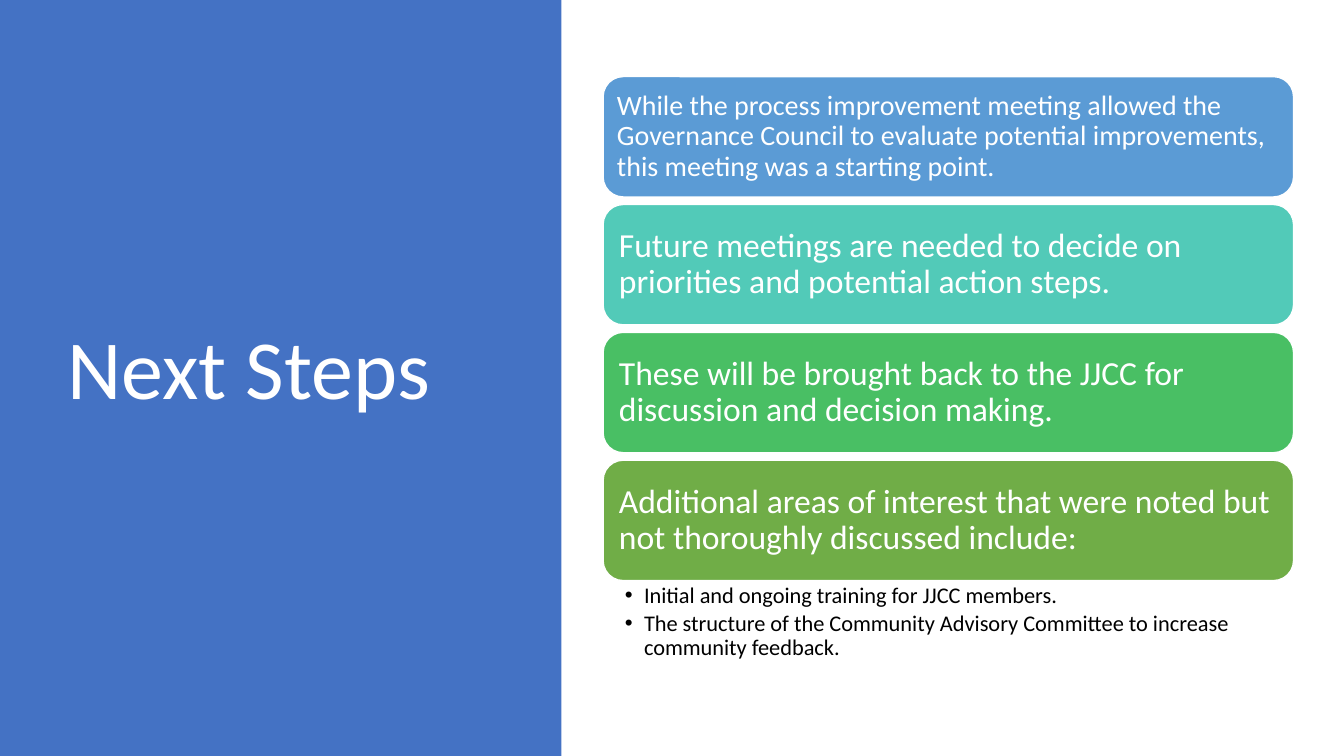
from lxml import etree
from pptx import Presentation
from pptx.dml.color import RGBColor
from pptx.enum.shapes import MSO_SHAPE
from pptx.enum.text import MSO_ANCHOR, MSO_AUTO_SIZE, PP_ALIGN
from pptx.oxml.ns import qn
from pptx.util import Cm, Pt

RECTANGLE = MSO_SHAPE.RECTANGLE
ROUNDED = MSO_SHAPE.ROUNDED_RECTANGLE
TOP, MIDDLE = MSO_ANCHOR.TOP, MSO_ANCHOR.MIDDLE
LEFT = PP_ALIGN.LEFT
NO_AUTOFIT = MSO_AUTO_SIZE.NONE

FONT = "Calibri"
COLORS = {
    "panel": "4472C4",
    "blue": "5B9BD5",
    "teal": "52CAB8",
    "green": "49BF64",
    "olive": "70AD47",
    "white": "FFFFFF",
    "black": "000000",
}
STEPS = [
    ("While the process improvement meeting allowed the Governance Council to "
     "evaluate potential improvements, this meeting was a starting point.", "blue", 20, 0.2),
    ("Future meetings are needed to decide on priorities and potential action steps.",
     "teal", 24, 0.25),
    ("These will be brought back to the JJCC for discussion and decision making.",
     "green", 24, 0.25),
    ("Additional areas of interest that were noted but not thoroughly discussed include:",
     "olive", 24, 0.25),
]
INTERESTS = [
    "Initial and ongoing training for JJCC members.",
    "The structure of the Community Advisory Committee to increase community feedback.",
]


def color(name):
    return RGBColor.from_string(COLORS[name])


def format_text(frame, size, color_name, anchor, margins):
    frame.word_wrap = True
    frame.auto_size = NO_AUTOFIT
    frame.vertical_anchor = anchor
    frame.margin_left, frame.margin_top, frame.margin_right, frame.margin_bottom = map(Cm, margins)
    for paragraph in frame.paragraphs:
        paragraph.alignment = LEFT
        paragraph.line_spacing = 0.9
        paragraph.space_before = Pt(0)
        for run in paragraph.runs:
            run.font.name = FONT
            run.font.size = Pt(size)
            run.font.color.rgb = color(color_name)


def place(placeholder, left, top, width, height):
    placeholder.left, placeholder.top = Cm(left), Cm(top)
    placeholder.width, placeholder.height = Cm(width), Cm(height)


def add_block(slide, kind, fill, left, top, width, height):
    block = slide.shapes.add_shape(kind, Cm(left), Cm(top), Cm(width), Cm(height))
    block.shadow.inherit = False
    block.fill.solid()
    block.fill.fore_color.rgb = color(fill)
    return block


def add_title_panel(slide, left, top, width, height):
    panel = add_block(slide, RECTANGLE, "panel", left, top, width, height)
    panel.line.fill.background()
    slide.shapes._spTree.insert(2, panel._element)
    title = slide.shapes.title
    place(title, left + 1.45, top + 1.73, width - 3.58, height - 3.76)
    title.text_frame.text = "Next Steps"
    format_text(title.text_frame, 60, "white", MIDDLE, (0.25, 0.13, 0.25, 0.13))


def add_steps(slide, left, top, width, height, gap=0.19):
    card_height = (height - gap * (len(STEPS) - 1)) / len(STEPS)
    for index, (wording, fill, size, margin) in enumerate(STEPS):
        card_top = top + index * (card_height + gap)
        card = add_block(slide, ROUNDED, fill, left, card_top, width, card_height)
        card.line.color.rgb = color("white")
        card.line.width = Pt(1)
        card.text_frame.text = wording
        format_text(card.text_frame, size, "white", MIDDLE, (margin,) * 4)


def add_interests(slide, left, top, width, height):
    interests = slide.placeholders[1]
    place(interests, left, top, width, height)
    frame = interests.text_frame
    frame.text = "\n".join(INTERESTS)
    format_text(frame, 16, "black", TOP, (0.55, 0.08, 0.4, 0.08))
    for paragraph in frame.paragraphs:
        paragraph.space_after = Pt(3.2)
        properties = paragraph._p.get_or_add_pPr()
        properties.set("marL", str(Cm(0.48)))
        properties.set("indent", str(-Cm(0.48)))
        etree.SubElement(properties, qn("a:buChar")).set("char", "•")


def main():
    presentation = Presentation()
    presentation.slide_width, presentation.slide_height = Cm(33.87), Cm(19.05)
    slide = presentation.slides.add_slide(presentation.slide_layouts[1])
    add_title_panel(slide, 0, 0, 14.15, 19.05)
    add_steps(slide, 15.2, 1.93, 17.4, 12.7)
    add_interests(slide, 15.2, 14.63, 17.4, 2.18)
    presentation.save("out.pptx")


if __name__ == "__main__":
    main()
